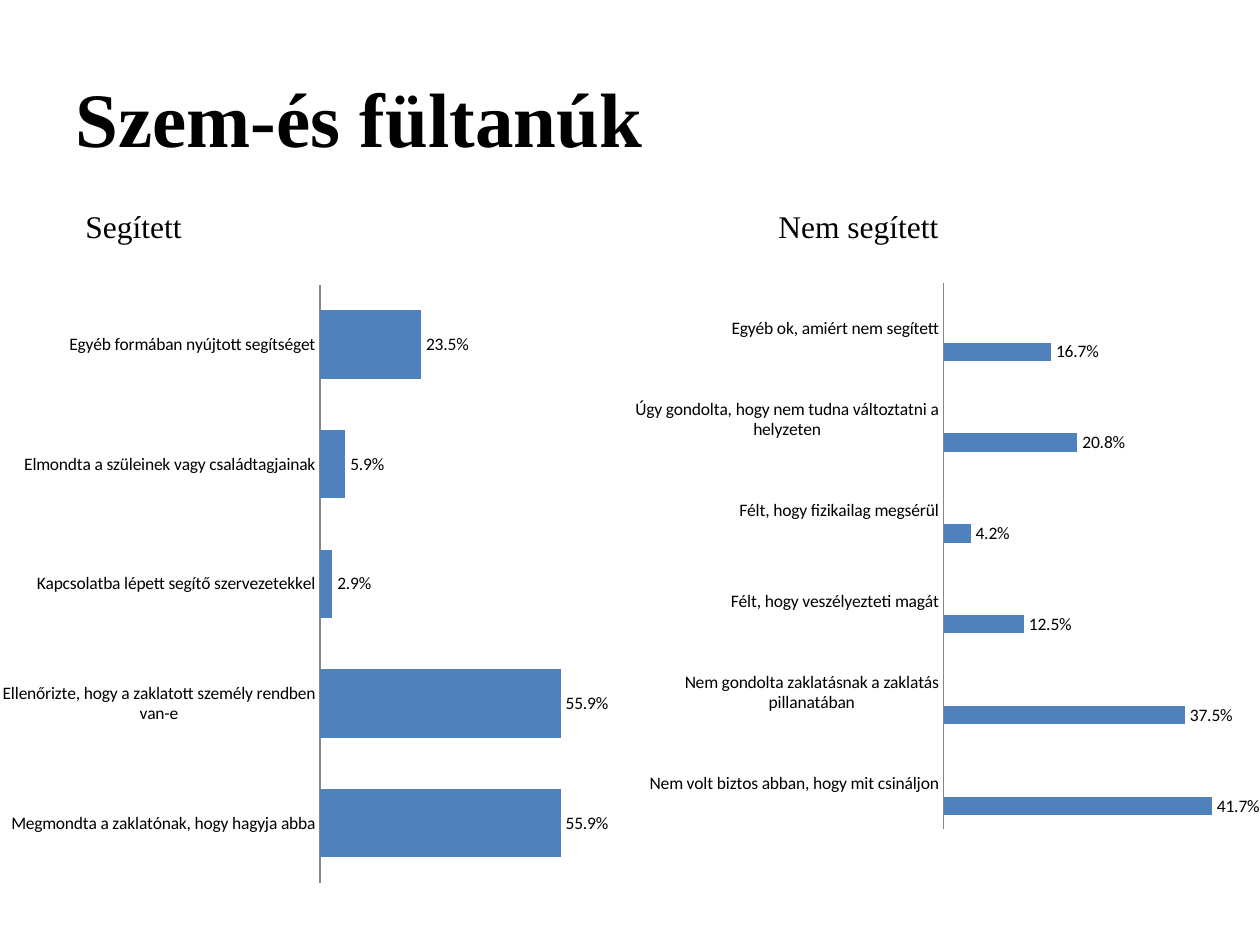
from dataclasses import dataclass

import pptx
import pptx.chart.data
import pptx.dml.color
import pptx.enum.chart
import pptx.enum.text
import pptx.util
from lxml import etree
from pptx.util import Inches


@dataclass(frozen=True)
class Theme:
    text: str = "000000"
    axis: str = "868686"
    series: tuple = ("4F81BD", "C0504D", "9BBB59")
    heading_font: str = "Times New Roman"
    chart_font: str = "Calibri"
    title_size: int = 44
    subtitle_size: int = 18
    chart_size: int = 10


def rgb(value):
    return pptx.dml.color.RGBColor.from_string(value)


class SlideBuilder:
    def __init__(self, slide, theme):
        self.s = slide
        self.theme = theme

    def style_font(self, font, name, size, bold=False):
        values = {"name": name, "size": pptx.util.Pt(size), "bold": bold}
        for key, value in values.items():
            setattr(font, key, value)
        font.color.rgb = rgb(self.theme.text)

    def text(self, text, box, size, bold=False):
        sp = self.s.shapes.add_textbox(*map(Inches, box))
        tf = sp.text_frame
        tf.word_wrap = True
        tf.vertical_anchor = pptx.enum.text.MSO_ANCHOR.MIDDLE
        r = tf.paragraphs[0].add_run()
        r.text = text
        self.style_font(r.font, self.theme.heading_font, size, bold)

    def bar_chart(self, box, plot_box, values, maximum, gap, overlap=0, empty_series=0):
        """Draw a percentage bar chart; box and plot_box are in slide inches."""
        data = pptx.chart.data.CategoryChartData(number_format="0.0%")
        data.categories = list(values)
        data.add_series("Series 1", list(values.values()))
        for n in range(empty_series):
            data.add_series(f"Series {n + 2}", [None] * len(values))
        chart = self.s.shapes.add_chart(
            pptx.enum.chart.XL_CHART_TYPE.BAR_CLUSTERED, *map(Inches, box), data
        ).chart
        chart.has_legend = chart.has_title = False
        self.style_font(chart.font, self.theme.chart_font, self.theme.chart_size)

        plot = chart.plots[0]
        for key, value in {"gap_width": gap, "overlap": overlap,
                           "vary_by_categories": False}.items():
            setattr(plot, key, value)
        for series, color in zip(plot.series, self.theme.series):
            series.format.fill.solid()
            series.format.fill.fore_color.rgb = rgb(color)
            labels = series.data_labels
            for key, value in {"show_value": True, "number_format": "0.0%",
                               "number_format_is_linked": False}.items():
                setattr(labels, key, value)
        self.style_axes(chart, maximum)
        self.place_plot(chart, box, plot_box)

    def style_axes(self, chart, maximum):
        none = pptx.enum.chart.XL_TICK_MARK.NONE
        formats = (
            (chart.category_axis, {"major_tick_mark": none, "minor_tick_mark": none,
                                   "has_major_gridlines": False}),
            (chart.value_axis, {"visible": False, "has_major_gridlines": False,
                                "minimum_scale": 0, "maximum_scale": maximum}),
        )
        for axis, values in formats:
            for key, value in values.items():
                setattr(axis, key, value)
        line = chart.category_axis.format.line
        line.color.rgb = rgb(self.theme.axis)
        line.width = pptx.util.Pt(0.75)
        chart.value_axis.tick_labels.number_format = "0.0%"
        chart.value_axis.tick_labels.number_format_is_linked = False

    def place_plot(self, chart, box, plot_box):
        """Fix the inner plot area as fractions of the chart box."""
        left, top, width, height = box
        x, y, w, h = plot_box
        fractions = {"x": (x - left) / width, "y": (y - top) / height,
                     "w": w / width, "h": h / height}
        area = chart.element.find(".//{*}plotArea")
        ns = "{%s}" % etree.QName(area).namespace
        layout = area.find(ns + "layout")
        if layout is None:
            layout = etree.Element(ns + "layout")
            area.insert(0, layout)
        manual = etree.SubElement(layout, ns + "manualLayout")
        settings = {"layoutTarget": "inner", "xMode": "edge", "yMode": "edge"}
        for tag, value in (settings | fractions).items():
            etree.SubElement(manual, ns + tag, val=str(value))


HELPED = {
    "Megmondta a zaklatónak, hogy hagyja abba": 0.559,
    "Ellenőrizte, hogy a zaklatott személy rendben van-e": 0.559,
    "Kapcsolatba lépett segítő szervezetekkel": 0.029,
    "Elmondta a szüleinek vagy családtagjainak": 0.059,
    "Egyéb formában nyújtott segítséget": 0.235,
}
DID_NOT_HELP = {
    "Nem volt biztos abban, hogy mit csináljon": 0.417,
    "Nem gondolta zaklatásnak a zaklatás pillanatában": 0.375,
    "Félt, hogy veszélyezteti magát": 0.125,
    "Félt, hogy fizikailag megsérül": 0.042,
    "Úgy gondolta, hogy nem tudna változtatni a helyzeten": 0.208,
    "Egyéb ok, amiért nem segített": 0.167,
}


def main():
    prs = pptx.Presentation()
    prs.slide_width, prs.slide_height = Inches(10), Inches(7.5)
    theme = Theme()
    b = SlideBuilder(prs.slides.add_slide(prs.slide_layouts[6]), theme)

    b.text("Szem-és fültanúk", (0.5, 0.3, 9, 1.25), theme.title_size, bold=True)
    b.bar_chart((0, 2.17, 4.83, 4.95), (2.55, 2.26, 2.06, 4.75), HELPED,
                maximum=0.6, gap=75)
    b.bar_chart((5.01, 2.17, 4.99, 4.5), (7.49, 2.25, 2.3, 4.33), DID_NOT_HELP,
                maximum=0.45, gap=150, overlap=-25, empty_series=2)
    b.text("Segített", (0.58, 1.58, 2.83, 0.42), theme.subtitle_size)
    b.text("Nem segített", (6.08, 1.58, 3, 0.42), theme.subtitle_size)
    prs.save("out.pptx")


if __name__ == "__main__":
    main()
